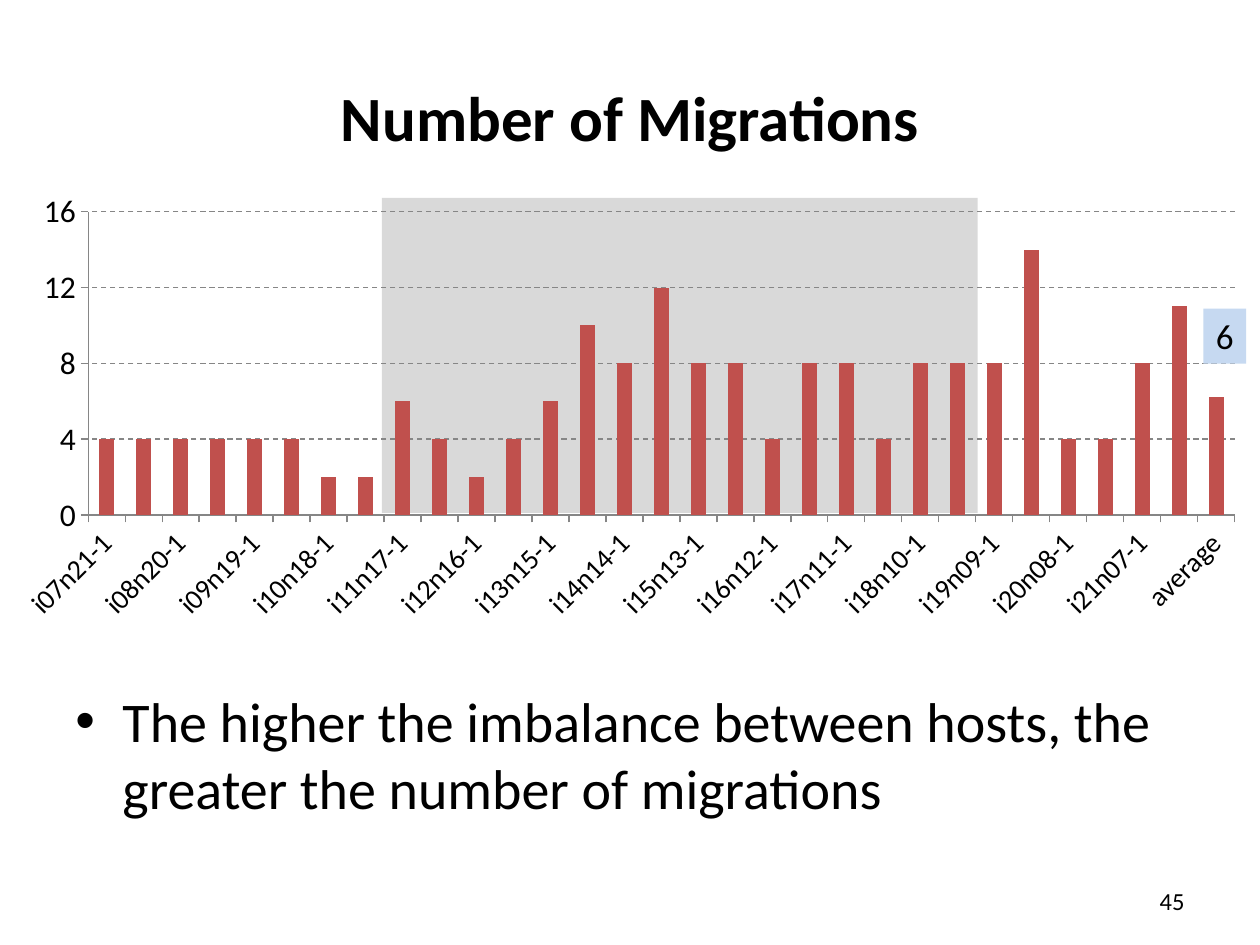
import lxml.etree
import pptx
import pptx.chart.data
import pptx.dml.color
import pptx.enum.chart
import pptx.enum.dml
import pptx.enum.shapes
import pptx.enum.text
import pptx.oxml.ns
import pptx.util

Cm, Pt = pptx.util.Cm, pptx.util.Pt
qn = pptx.oxml.ns.qn
Align = pptx.enum.text.PP_ALIGN
Anchor = pptx.enum.text.MSO_ANCHOR


class Theme:
    font = "Calibri"
    ink, bar, band, note, line = "000000", "C0504D", "D9D9D9", "C6D9F1", "868686"
    title, body, mark, value, label, page = 36, 32, 20, 18, 16, 14


class Deck:
    def __init__(self, theme, width, height):
        self.theme = theme
        self.file = pptx.Presentation()
        self.file.slide_width, self.file.slide_height = Cm(width), Cm(height)
        self.slide = self.file.slides.add_slide(self.file.slide_layouts[6])

    def color(self, code):
        return pptx.dml.color.RGBColor.from_string(code)

    def style(self, font, size, bold=False):
        font.name, font.size, font.bold = self.theme.font, Pt(size), bold
        font.color.rgb = self.color(self.theme.ink)

    def label(self, shape, text, size, align=Align.LEFT, anchor=Anchor.TOP,
              bold=False, wrap=True):
        frame = shape.text_frame
        frame.word_wrap, frame.vertical_anchor = wrap, anchor
        para = frame.paragraphs[0]
        para.text, para.alignment = text, align
        self.style(para.font, size, bold)
        return para

    def text(self, box, text, size, **look):
        shape = self.slide.shapes.add_textbox(*map(Cm, box))
        return self.label(shape, text, size, **look)

    def bullet(self, box, text, size):
        para = self.text(box, text, size)
        para.space_before = Pt(size * 0.2)
        props = para._p.get_or_add_pPr()
        props.set("marL", str(Cm(0.95)))
        props.set("indent", str(-Cm(0.95)))
        fonts = props.makeelement(qn("a:buFont"), {"typeface": "Arial"})
        sign = props.makeelement(qn("a:buChar"), {"char": "•"})
        props.find(qn("a:spcBef")).addnext(fonts)
        fonts.addnext(sign)

    def rect(self, box, fill):
        kind = pptx.enum.shapes.MSO_SHAPE.RECTANGLE
        shape = self.slide.shapes.add_shape(kind, *map(Cm, box))
        shape.shadow.inherit = False
        shape.fill.solid()
        shape.fill.fore_color.rgb = self.color(fill)
        shape.line.fill.background()
        return shape

    def chart(self, box, names, values, area):
        data = pptx.chart.data.CategoryChartData()
        data.categories = names
        data.add_series("Series 1", values)
        kind = pptx.enum.chart.XL_CHART_TYPE.COLUMN_CLUSTERED
        chart = self.slide.shapes.add_chart(kind, *map(Cm, box), data).chart
        chart.has_legend = chart.has_title = False
        self.style(chart.font, self.theme.value)

        # Bars
        plot = chart.plots[0]
        plot.gap_width, plot.vary_by_categories = 150, False
        fill = plot.series[0].format.fill
        fill.solid()
        fill.fore_color.rgb = self.color(self.theme.bar)

        # Axes and grid
        cat, val = chart.category_axis, chart.value_axis
        val.minimum_scale, val.maximum_scale, val.major_unit = 0, 16, 4
        grid = val.major_gridlines.format.line
        grid.dash_style = pptx.enum.dml.MSO_LINE.DASH
        for line in (cat.format.line, val.format.line, grid):
            line.color.rgb, line.width = self.color(self.theme.line), Pt(0.75)
        for axis, size in ((cat, self.theme.label), (val, self.theme.value)):
            axis.major_tick_mark = pptx.enum.chart.XL_TICK_MARK.OUTSIDE
            self.style(axis.tick_labels.font, size)

        # Slanted labels, every second one shown
        node = cat._element
        node.find(qn("c:txPr")).find(qn("a:bodyPr")).set("rot", "-2700000")
        last = node.find(qn("c:noMultiLvlLbl"))
        for tag, step in (("c:tickLblSkip", "2"), ("c:tickMarkSkip", "1")):
            last.addprevious(last.makeelement(qn(tag), {"val": step}))

        # Place of the plot area
        root = plot._element.getparent()
        old = root.find(qn("c:layout"))
        if old is not None:
            root.remove(old)
        outer = root.makeelement(qn("c:layout"), {})
        root.insert(0, outer)
        inner = lxml.etree.SubElement(outer, qn("c:manualLayout"))
        parts = [("layoutTarget", "inner"), ("xMode", "edge"), ("yMode", "edge")]
        for tag, part in parts + list(zip("xywh", area)):
            lxml.etree.SubElement(inner, qn("c:" + tag), val=str(part))


def main():
    theme = Theme()
    deck = Deck(theme, 25.4, 19.05)

    # Band behind the middle hosts
    deck.rect((7.7, 3.99, 12.01, 6.35), theme.band)

    # Page number and title
    deck.text((18.2, 17.65, 5.93, 1.01), "45", theme.page,
              align=Align.RIGHT, anchor=Anchor.MIDDLE)
    deck.text((0, 0.76, 25.4, 3.18), "Number of Migrations", theme.title,
              align=Align.CENTER, anchor=Anchor.MIDDLE, bold=True)

    # Two machines per host, then the average
    names = [f"i{host:02}n{28 - host:02}-{part}"
             for host in range(7, 22) for part in (1, 2)] + ["average"]
    values = [4, 4, 4, 4, 4, 4, 2, 2, 6, 4, 2, 4, 6, 10, 8, 12,
              8, 8, 4, 8, 8, 4, 8, 8, 8, 14, 4, 4, 8, 11, 6.2]
    deck.chart((0, 3.73, 25.4, 8.99), names, values, (0.07, 0.06, 0.91, 0.68))

    # Finding
    deck.bullet((1.27, 13.72, 22.86, 5), "The higher the imbalance between "
                "hosts, the greater the number of migrations", theme.body)

    # Mark over the average
    mark = deck.rect((24.26, 6.22, 0.86, 1.11), theme.note)
    deck.label(mark, "6", theme.mark, wrap=False)

    deck.file.save("out.pptx")


if __name__ == "__main__":
    main()
